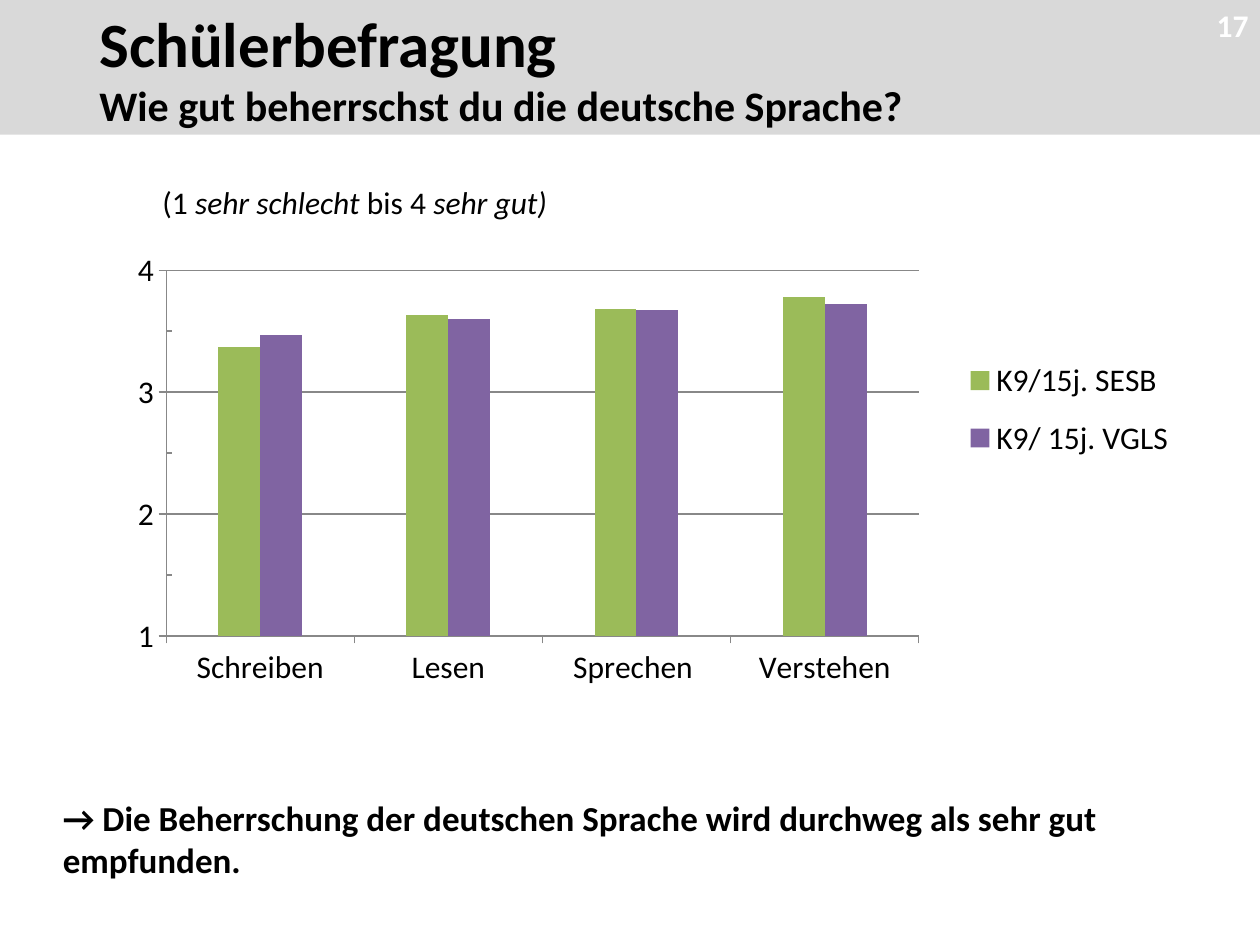
from lxml import etree
from pptx import Presentation
from pptx.chart.data import CategoryChartData
from pptx.dml.color import RGBColor
from pptx.enum import chart as ch, shapes, text
from pptx.oxml.ns import qn
from pptx.util import Pt

COLORS = {"band": "D9D9D9", "ink": "000000", "page": "FFFFFF", "axis": "888888",
          "sesb": "9BBB59", "vgls": "8064A2"}
FONT = "Calibri"


def add_run(paragraph, words, size=18, color="ink", bold=False, italic=False):
    run = paragraph.add_run()
    run.text = words
    run.font.name, run.font.size = FONT, Pt(size)
    run.font.bold, run.font.italic = bold, italic
    run.font.color.rgb = RGBColor.from_string(COLORS[color])


def set_layout(part, x, y, w, h, inner=False):
    """Place a chart part by fractions of the chart area."""
    layout = part.find(qn("c:layout"))
    if layout is None:
        layout = etree.Element(qn("c:layout"))
        part.insert(1 if part.tag == qn("c:legend") else 0, layout)
    manual = etree.SubElement(layout, qn("c:manualLayout"))
    settings = [("layoutTarget", "inner")] if inner else []
    settings += [("xMode", "edge"), ("yMode", "edge"), ("x", x), ("y", y), ("w", w), ("h", h)]
    for tag, value in settings:
        etree.SubElement(manual, qn(f"c:{tag}")).set("val", str(value))


prs = Presentation()
prs.slide_width, prs.slide_height = Pt(720), Pt(540)
slide = prs.slides.add_slide(prs.slide_layouts[6])

# Scale note and conclusion
scale = slide.shapes.add_textbox(Pt(85.7), Pt(100.8), Pt(617.8), Pt(28.8)).text_frame
scale.word_wrap = True
for words, italic in [("(1 ", False), ("sehr schlecht ", True),
                      ("bis 4 ", False), ("sehr gut)", True)]:
    add_run(scale.paragraphs[0], words, italic=italic)

conclusion = slide.shapes.add_textbox(Pt(28.8), Pt(451.4), Pt(661.7), Pt(55.4)).text_frame
conclusion.word_wrap = True
add_run(conclusion.paragraphs[0], "→ Die Beherrschung der deutschen Sprache wird durchweg "
        "als sehr gut empfunden.", size=20, bold=True)

# Ratings chart
ratings = CategoryChartData()
ratings.categories = ["Schreiben", "Lesen", "Sprechen ", "Verstehen"]
ratings.add_series("K9/15j. SESB", [3.37, 3.63, 3.68, 3.78])
ratings.add_series("K9/ 15j. VGLS", [3.47, 3.6, 3.67, 3.72])
chart = slide.shapes.add_chart(ch.XL_CHART_TYPE.COLUMN_CLUSTERED, Pt(28.8), Pt(139.7),
                               Pt(661.7), Pt(294.5), ratings).chart
chart.has_title = False
chart.font.name, chart.font.size = FONT, Pt(16)
chart.font.color.rgb = RGBColor.from_string(COLORS["ink"])

plot = chart.plots[0]
plot.gap_width, plot.overlap, plot.vary_by_categories = 249, 0, False
for series, color in zip(plot.series, ("sesb", "vgls")):
    series.format.fill.solid()
    series.format.fill.fore_color.rgb = RGBColor.from_string(COLORS[color])

value_axis, category_axis = chart.value_axis, chart.category_axis
value_axis.minimum_scale, value_axis.maximum_scale = 1, 4
value_axis.major_unit, value_axis.minor_unit = 1, 0.5
value_axis.minor_tick_mark = ch.XL_TICK_MARK.INSIDE
value_axis.tick_labels.number_format = "#,##0"
value_axis.tick_labels.number_format_is_linked = False
value_axis.has_major_gridlines = True
for axis in (value_axis, category_axis):
    axis.major_tick_mark = ch.XL_TICK_MARK.OUTSIDE
for line in (value_axis.format.line, category_axis.format.line,
             value_axis.major_gridlines.format.line):
    line.width = Pt(0.75)
    line.color.rgb = RGBColor.from_string(COLORS["axis"])

chart.has_legend = True
legend = chart.legend
legend.position = ch.XL_LEGEND_POSITION.RIGHT
legend.include_in_layout = False
for font in (value_axis.tick_labels.font, category_axis.tick_labels.font, legend.font):
    font.name, font.size = FONT, Pt(18)
    font.color.rgb = RGBColor.from_string(COLORS["ink"])

plot_area = chart.element.find(".//" + qn("c:plotArea"))
set_layout(plot_area, 0.1, 0.05, 0.65, 0.71, inner=True)
set_layout(chart.element.find(".//" + qn("c:legend")), 0.78, 0.19, 0.2, 0.26)

# Header band
header = slide.shapes.add_shape(shapes.MSO_SHAPE.RECTANGLE, 0, 0, Pt(720), Pt(77))
header.shadow.inherit = False
header.fill.solid()
header.fill.fore_color.rgb = RGBColor.from_string(COLORS["band"])
header.line.fill.background()
heading = header.text_frame
heading.word_wrap = True
heading.vertical_anchor = text.MSO_ANCHOR.MIDDLE
for paragraph, words, size in [
        (heading.paragraphs[0], "Schülerbefragung", 36),
        (heading.add_paragraph(), "Wie gut beherrschst du die deutsche Sprache?", 24)]:
    paragraph.alignment = text.PP_ALIGN.LEFT
    paragraph._p.get_or_add_pPr().set("marL", str(Pt(49.7)))
    add_run(paragraph, words, size=size, bold=True)

page_number = slide.shapes.add_textbox(Pt(634.3), 0, Pt(79.2), Pt(28.8)).text_frame
page_number.word_wrap = True
page_number.vertical_anchor = text.MSO_ANCHOR.MIDDLE
page_number.margin_left = page_number.margin_right = 0
page_number.margin_top = page_number.margin_bottom = 0
page_number.paragraphs[0].alignment = text.PP_ALIGN.RIGHT
add_run(page_number.paragraphs[0], "17", color="page", bold=True)

prs.save("out.pptx")
